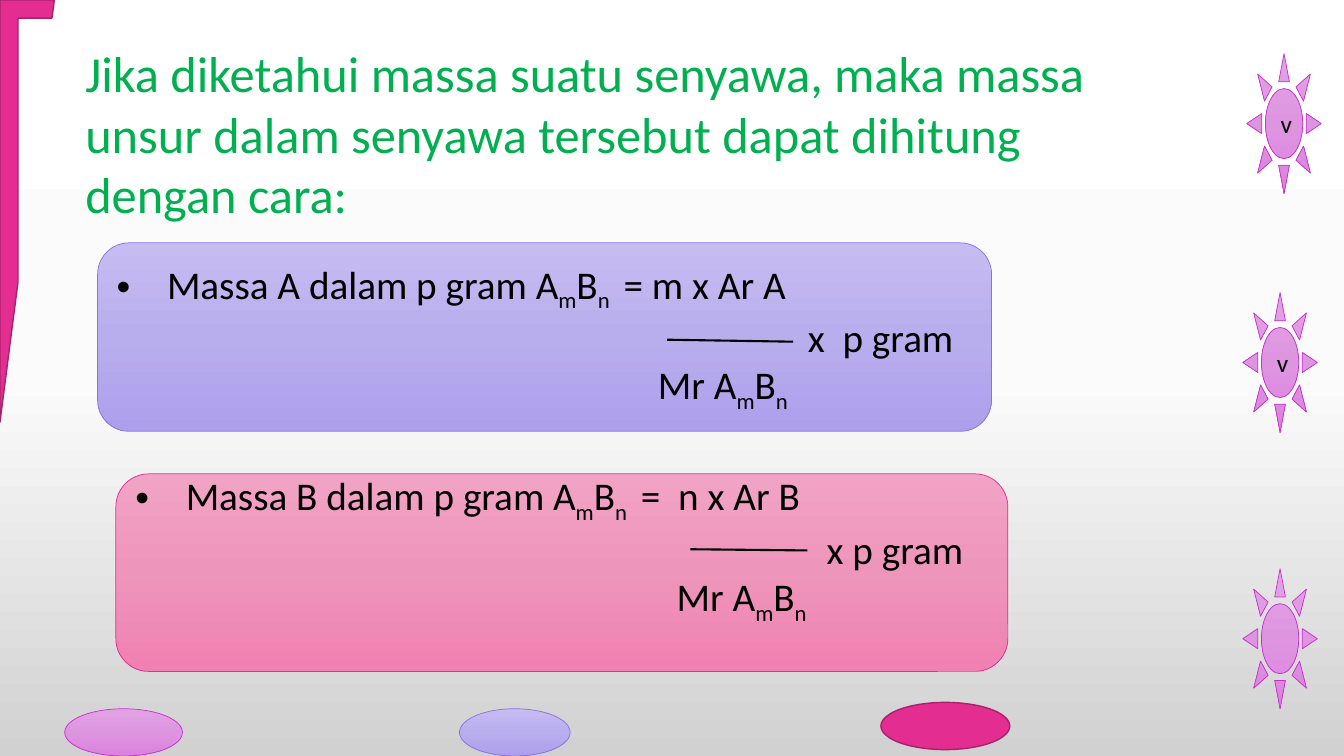
from copy import deepcopy

from lxml import etree
from pptx import Presentation
from pptx.dml.color import RGBColor
from pptx.enum.shapes import MSO_CONNECTOR, MSO_SHAPE
from pptx.enum.text import MSO_ANCHOR, PP_ALIGN
from pptx.oxml.ns import qn
from pptx.util import Cm, Pt

SUN, HALF_FRAME = MSO_SHAPE.SUN, MSO_SHAPE.HALF_FRAME
OVAL, ROUNDED = MSO_SHAPE.OVAL, MSO_SHAPE.ROUNDED_RECTANGLE
STRAIGHT = MSO_CONNECTOR.STRAIGHT
MIDDLE, CENTER = MSO_ANCHOR.MIDDLE, PP_ALIGN.CENTER

FONT = "Calibri"
BLACK = RGBColor(0x00, 0x00, 0x00)
GREEN = RGBColor(0x00, 0xB0, 0x50)
PINK = RGBColor(0xE3, 0x2D, 0x91)
DARK_PINK = RGBColor(0xA8, 0x21, 0x6B)
MAGENTA = RGBColor(0xC8, 0x30, 0xCC)
VIOLET = RGBColor(0x89, 0x71, 0xE1)
GREY_FADE = (RGBColor(0xFF, 0xFF, 0xFF), RGBColor(0xFB, 0xFB, 0xFB), RGBColor(0xD1, 0xD1, 0xD1))
ORCHID_FADE = (RGBColor(0xE2, 0xA3, 0xE5), RGBColor(0xDD, 0x95, 0xE0), RGBColor(0xDC, 0x81, 0xDF))
VIOLET_FADE = (RGBColor(0xC6, 0xBC, 0xF1), RGBColor(0xB9, 0xAE, 0xED), RGBColor(0xAE, 0x9F, 0xED))
ROSE_FADE = (RGBColor(0xF1, 0xA3, 0xC5), RGBColor(0xEE, 0x95, 0xBB), RGBColor(0xF0, 0x81, 0xB2))

# Indents of the formula lines inside a panel, in cm
BULLET_INDENT, DENOMINATOR_INDENT, FACTOR_INDENT = 1.27, 13.64, 17.42


def fade(fill, element, colors):
    """Fill from top to bottom with three evenly spaced colours."""
    fill.gradient()
    fill.gradient_angle = 270
    stop_list = next(element.iter(qn("a:gsLst")))
    stop_list.insert(1, deepcopy(stop_list[0]))
    for stop, color, position in zip(fill.gradient_stops, colors, (0, 0.5, 1)):
        stop.color.rgb = color
        stop.position = position


def add_figure(slide, kind, box, fill, outline):
    """Add a preset shape; fill is one colour or a fade of three."""
    figure = slide.shapes.add_shape(kind, *map(Cm, box))
    figure.shadow.inherit = False
    if isinstance(fill, RGBColor):
        figure.fill.solid()
        figure.fill.fore_color.rgb = fill
        figure.line.width = Pt(1)
    else:
        fade(figure.fill, figure.element, fill)
        figure.line.width = Pt(0.5)
    figure.line.color.rgb = outline
    return figure


def add_run(paragraph, text, size, color=BLACK, subscript=False):
    run = paragraph.add_run()
    run.text = text
    run.font.name = FONT
    run.font.size = Pt(size)
    run.font.color.rgb = color
    if subscript:
        run.font._element.set("baseline", "-25000")


def draw_backdrop(slide):
    fade(slide.background.fill, slide.element, GREY_FADE)

    # Suns down the right side
    for left, top, letter in ((31.42, 1.35, "v"), (31.32, 7.37, "v"), (31.32, 14.33, "")):
        sun = add_figure(slide, SUN, (left, top, 1.88, 3.53), ORCHID_FADE, MAGENTA)
        if letter:
            sun.text_frame.vertical_anchor = MIDDLE
            label = sun.text_frame.paragraphs[0]
            label.alignment = CENTER
            add_run(label, letter, 18)

    # Corner frame and ovals along the bottom
    add_figure(slide, HALF_FRAME, (0, 0, 1.37, 10.64), PINK, DARK_PINK)
    add_figure(slide, OVAL, (1.63, 17.86, 2.97, 1.19), ORCHID_FADE, MAGENTA)
    add_figure(slide, OVAL, (11.58, 17.86, 2.79, 1.19), VIOLET_FADE, VIOLET)
    add_figure(slide, OVAL, (22.2, 17.7, 3.25, 1.19), PINK, DARK_PINK)


def draw_heading(slide, box, text):
    heading = slide.shapes.add_textbox(*map(Cm, box)).text_frame
    heading.word_wrap = True
    add_run(heading.paragraphs[0], text, 36, GREEN)


def draw_formula(slide, box, fill, outline, lines, bar, bottom_inset=0.13):
    """Panel with a mass formula; bar is x, y, length, drop from the panel corner."""
    panel = add_figure(slide, ROUNDED, box, fill, outline)
    frame = panel.text_frame
    frame.word_wrap = True
    frame.vertical_anchor = MIDDLE
    frame.margin_bottom = Cm(bottom_inset)

    # Every second piece of a line is a subscript
    indents = (BULLET_INDENT, FACTOR_INDENT, DENOMINATOR_INDENT)
    for number, (pieces, indent) in enumerate(zip(lines, indents)):
        line = frame.paragraphs[0] if number == 0 else frame.add_paragraph()
        line.alignment = PP_ALIGN.LEFT
        properties = line._p.get_or_add_pPr()
        properties.set("marL", str(Cm(indent)))
        if number == 0:
            properties.set("indent", str(-Cm(indent)))
            etree.SubElement(properties, qn("a:buFont")).set("typeface", "Arial")
            etree.SubElement(properties, qn("a:buChar")).set("char", "•")
        for place, piece in enumerate(pieces):
            add_run(line, piece, 28, subscript=place % 2 == 1)

    # Fraction bar
    x, y = box[0] + bar[0], box[1] + bar[1]
    fraction = slide.shapes.add_connector(
        STRAIGHT, Cm(x), Cm(y), Cm(x + bar[2]), Cm(y + bar[3]))
    fraction.line.color.rgb = BLACK
    fraction.line.width = Pt(1.5)
    etree.SubElement(fraction.element.spPr, qn("a:effectLst"))


def main():
    deck = Presentation()
    deck.slide_width, deck.slide_height = Cm(33.87), Cm(19.05)
    slide = deck.slides.add_slide(deck.slide_layouts[6])

    draw_backdrop(slide)
    draw_heading(slide, (1.9, 0.94, 26.77, 4.88),
                 "Jika diketahui massa suatu senyawa, maka massa unsur "
                 "dalam senyawa tersebut dapat dihitung dengan cara:")

    denominator = ("Mr A", "m", "B", "n")
    draw_formula(slide, (2.46, 6.12, 22.53, 4.75), VIOLET_FADE, VIOLET,
                 (("Massa A dalam p gram A", "m", "B", "n ", " = m x Ar A"),
                  ("x  p gram",), denominator),
                 (14.35, 2.44, 3.18, 0.05))
    draw_formula(slide, (2.92, 11.94, 22.48, 4.98), ROSE_FADE, PINK,
                 (("Massa B dalam p gram A", "m", "B", "n ", " =  n x Ar B"),
                  ("x p gram",), denominator),
                 (14.48, 1.9, 2.95, 0.03), bottom_inset=1.33)

    deck.save("out.pptx")


if __name__ == "__main__":
    main()
